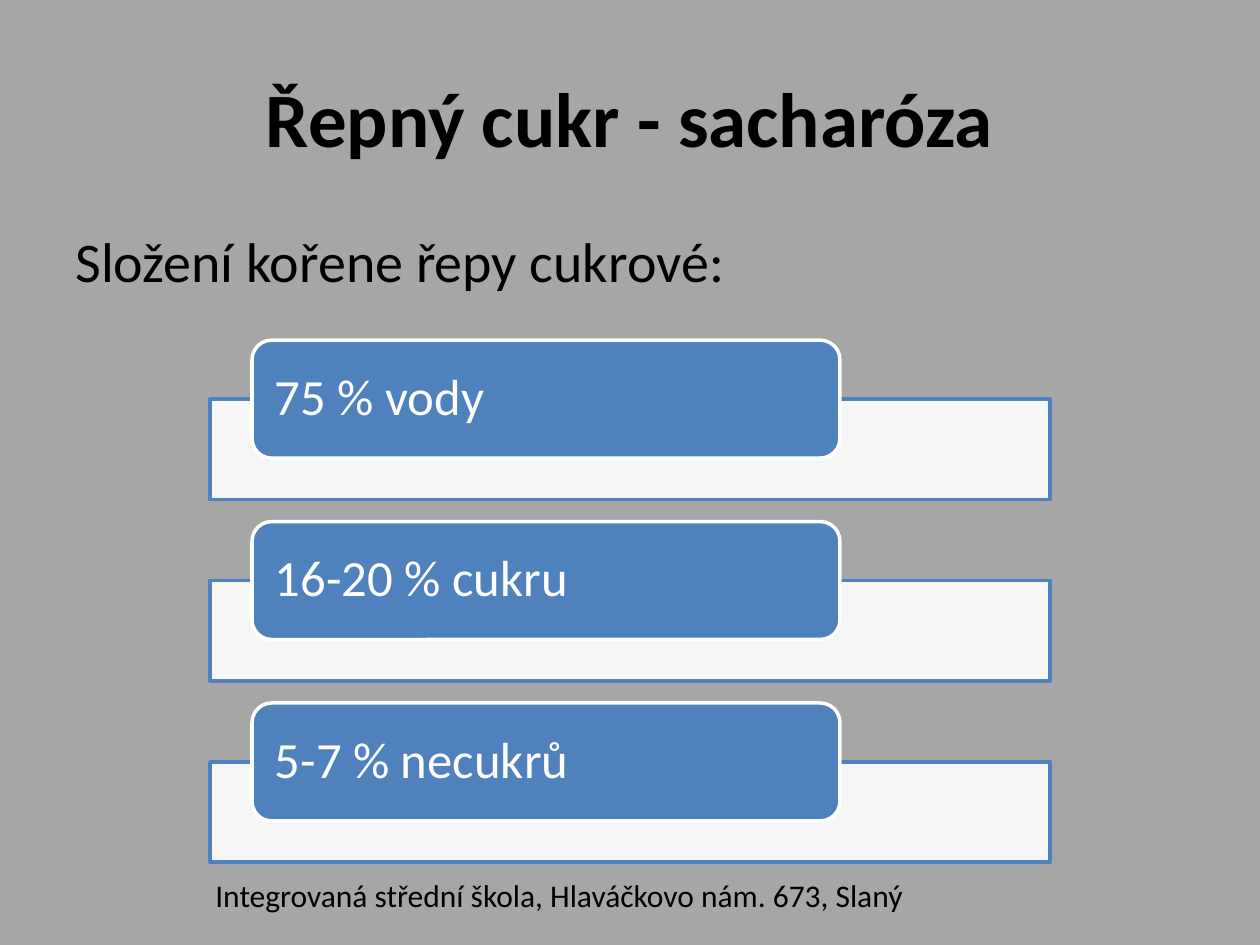
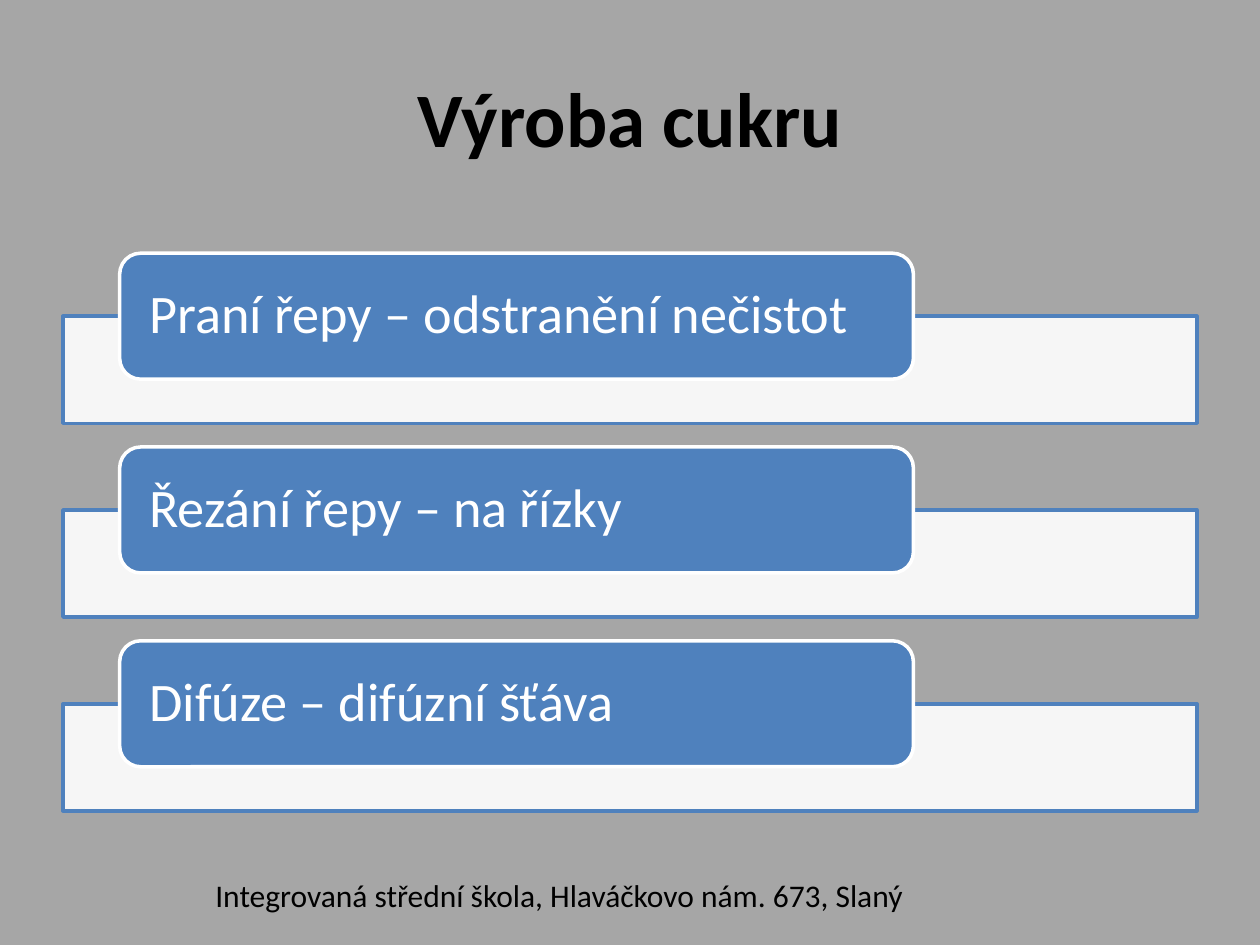
import pptx
import pptx.util
import pptx.dml.color
import pptx.enum.shapes
import pptx.enum.text
import pptx.oxml
import pptx.oxml.ns

# Content
FOOTER = "Integrovaná střední škola, Hlaváčkovo nám. 673, Slaný"
SLIDES = [
    {"title": "Řepný cukr - sacharóza",
     "intro": "Složení kořene řepy cukrové:",
     "items": ["75 % vody", "16-20 % cukru", "5-7 % necukrů"],
     "list": {"left": 120, "top": 194.4, "width": 480,
              "label_height": 67.4, "size": 29, "inset": 13}},
    {"title": "Výroba cukru",
     "intro": None,
     "items": ["Praní řepy – odstranění nečistot", "Řezání řepy – na řízky",
               "Difúze – difúzní šťáva"],
     "list": {"left": 36, "top": 144.7, "width": 648,
              "label_height": 72, "size": 31, "inset": 17}},
]

# Shared look
FONT = "Calibri"
BACKGROUND, BLUE, WHITE, BLACK = "A6A6A6", "4F81BD", "FFFFFF", "000000"
BAR_ALPHA = 90
LABEL_INDENT, LABEL_WIDTH = 0.05, 0.7             # shares of the bar width
BAR_DROP, BAR_HEIGHT, PITCH = 0.5, 0.85, 1.538    # shares of the label height
CORNER = 0.1667
CORNER_TEXT_INSET = 0.29 * CORNER                 # text inset made by the round corner

Pt = pptx.util.Pt
SHAPES = pptx.enum.shapes.MSO_SHAPE
ALIGN = pptx.enum.text.PP_ALIGN
MIDDLE = pptx.enum.text.MSO_ANCHOR.MIDDLE


def rgb(color):
    return pptx.dml.color.RGBColor.from_string(color)


def write(frame, text, size, color, align=ALIGN.LEFT, bold=False):
    paragraph = frame.paragraphs[0]
    paragraph.alignment = align
    run = paragraph.add_run()
    run.text = text
    run.font.name, run.font.size, run.font.bold = FONT, Pt(size), bold
    run.font.color.rgb = rgb(color)
    return paragraph


def add_title(slide, text):
    title = slide.shapes.title
    title.left, title.top, title.width, title.height = map(Pt, (36, 21.6, 648, 90))
    title.text_frame.vertical_anchor = MIDDLE
    write(title.text_frame, text, 44, BLACK, ALIGN.CENTER, bold=True)


def add_text(slide, text, box, size):
    frame = slide.shapes.add_textbox(*map(Pt, box)).text_frame
    frame.word_wrap = True
    write(frame, text, size, BLACK)


def add_box(slide, preset, box, fill, line):
    shape = slide.shapes.add_shape(preset, *map(Pt, box))
    shape.shadow.inherit = False
    shape.fill.solid()
    shape.fill.fore_color.rgb = rgb(fill)
    shape.line.color.rgb = rgb(line)
    shape.line.width = Pt(2)
    return shape


def set_alpha(shape, percent):
    color = shape.fill._xPr.find(".//" + pptx.oxml.ns.qn("a:srgbClr"))
    color.append(pptx.oxml.parse_xml(
        f'<a:alpha {pptx.oxml.ns.nsdecls("a")} val="{percent * 1000}"/>'))


def add_list(slide, items, left, top, width, label_height, size, inset):
    for index, item in enumerate(items):
        label_top = top + index * PITCH * label_height
        # Pale bar behind the label
        bar = add_box(slide, SHAPES.RECTANGLE,
                      (left, label_top + BAR_DROP * label_height,
                       width, BAR_HEIGHT * label_height), WHITE, BLUE)
        set_alpha(bar, BAR_ALPHA)
        # Label
        label = add_box(slide, SHAPES.ROUNDED_RECTANGLE,
                        (left + LABEL_INDENT * width, label_top,
                         LABEL_WIDTH * width, label_height), BLUE, WHITE)
        label.adjustments[0] = CORNER
        frame = label.text_frame
        frame.word_wrap = True
        frame.vertical_anchor = MIDDLE
        frame.margin_left = frame.margin_right = Pt(inset - CORNER_TEXT_INSET * label_height)
        frame.margin_top = frame.margin_bottom = 0
        write(frame, item, size, WHITE).line_spacing = 0.9


def main():
    deck = pptx.Presentation()
    deck.slide_width, deck.slide_height = Pt(720), Pt(540)
    background = deck.slide_master.background.fill
    background.solid()
    background.fore_color.rgb = rgb(BACKGROUND)
    title_only = deck.slide_layouts.get_by_name("Title Only")

    for content in SLIDES:
        slide = deck.slides.add_slide(title_only)
        add_title(slide, content["title"])
        if content["intro"]:
            add_text(slide, content["intro"], (36, 126, 648, 50), 32)
        add_list(slide, content["items"], **content["list"])
        add_text(slide, FOOTER, (116, 496.8, 532.8, 29), 18)

    deck.save("out.pptx")


if __name__ == "__main__":
    main()
